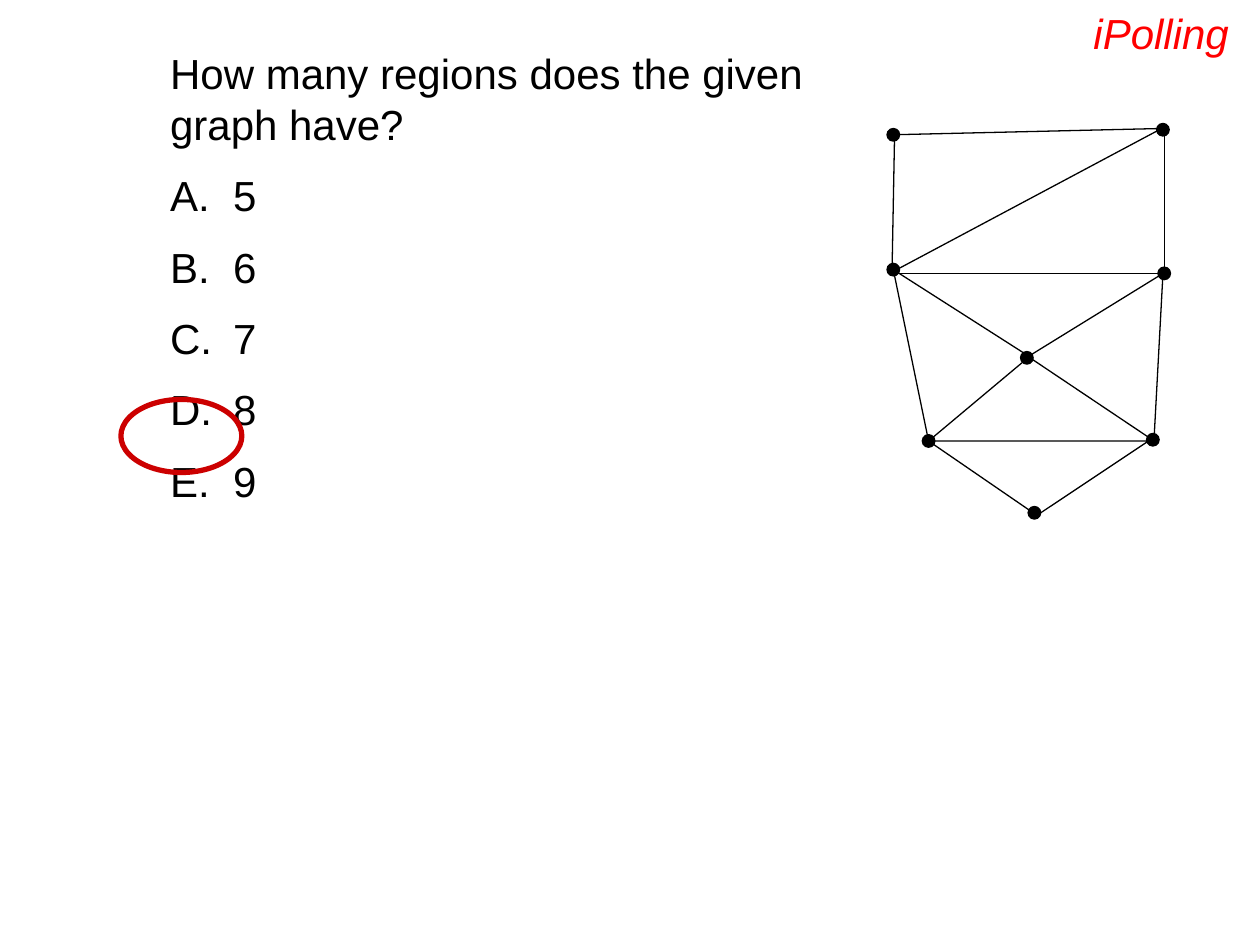
from lxml.etree import SubElement
from pptx import Presentation
from pptx.dml.color import RGBColor
from pptx.enum.shapes import MSO_CONNECTOR, MSO_SHAPE
from pptx.enum.text import MSO_ANCHOR, MSO_AUTO_SIZE
from pptx.oxml.ns import qn
from pptx.util import Pt

PX = 9144  # 100 px to the inch
THEME = {
    "font": "Arial",
    "size": Pt(24),
    "ink": RGBColor(0x00, 0x00, 0x00),
    "label": RGBColor(0xFF, 0x00, 0x00),
    "answer": RGBColor(0xCC, 0x00, 0x00),
    "thin": Pt(0.75),
    "thick": Pt(3),
}


def style_line(sp, color, width):
    sp.line.color.rgb = color
    sp.line.width = width


def style_font(p, color, italic=False):
    for r in p.runs:
        r.font.name = THEME["font"]
        r.font.size = THEME["size"]
        r.font.color.rgb = color
        r.font.italic = italic


prs = Presentation()
prs.slide_width, prs.slide_height = 1000 * PX, 750 * PX
s = prs.slides.add_slide(prs.slide_layouts[1])
title = s.shapes.title.element
title.getparent().remove(title)

# Question and lettered choices
body = s.placeholders[1]
body.left, body.top, body.width, body.height = [v * PX for v in (125, 33, 525, 394)]
tf = body.text_frame
tf.auto_size = MSO_AUTO_SIZE.NONE
tf.vertical_anchor = MSO_ANCHOR.TOP
lines = ["How many regions does the given graph have?", "5", "6", "7", "8", "9"]
tf.text = "\n".join(lines)
for i, p in enumerate(tf.paragraphs):
    p.space_before = Pt(12)
    style_font(p, THEME["ink"])
    pPr = p._p.get_or_add_pPr()
    indent = 50 * PX if i else 0
    pPr.set("marL", str(indent))
    pPr.set("indent", str(-indent))
    bullet = SubElement(pPr, qn("a:buAutoNum" if i else "a:buNone"))
    if i:
        bullet.set("type", "alphaUcPeriod")

# Straight edges of the graph
edges = [
    (708, 217, 925, 217),
    (710, 106, 708, 214),
    (924, 102, 924, 219),
]
for edge in edges:
    cxn = s.shapes.add_connector(MSO_CONNECTOR.STRAIGHT, *[v * PX for v in edge])
    style_line(cxn, THEME["ink"], THEME["thin"])
    SubElement(cxn._element.spPr, qn("a:effectLst"))

# Edge chains: upper (open) and lower (closed)
chains = [
    ([(708, 107), (922, 102), (708, 216)], False),
    ([(709, 214), (817, 283), (737, 350), (823, 409), (916, 347),
      (923, 217), (816, 283), (916, 350), (737, 350)], True),
]
for points, closed in chains:
    builder = s.shapes.build_freeform(*points[0], scale=PX)
    builder.add_line_segments(points[1:], close=closed)
    sp = builder.convert_to_shape()
    sp.shadow.inherit = False
    sp.fill.background()
    style_line(sp, THEME["ink"], THEME["thin"])

# Vertices
DOT = 10
dots = [(919, 212), (704, 209), (918, 98), (704, 102),
        (816, 402), (910, 344), (732, 345), (810, 279)]
for x, y in dots:
    sp = s.shapes.add_shape(MSO_SHAPE.OVAL, x * PX, y * PX, DOT * PX, DOT * PX)
    sp.shadow.inherit = False
    sp.fill.solid()
    sp.fill.fore_color.rgb = THEME["ink"]
    style_line(sp, THEME["ink"], THEME["thin"])

# Corner label
label = s.shapes.add_textbox(858 * PX, 1 * PX, 142 * PX, 51 * PX)
label.text_frame.word_wrap = True
label.text_frame.text = "iPolling"
style_font(label.text_frame.paragraphs[0], THEME["label"], italic=True)

# Ring around the answer
ring = s.shapes.add_shape(MSO_SHAPE.OVAL, 96 * PX, 317 * PX, 96 * PX, 58 * PX)
ring.shadow.inherit = False
ring.fill.background()
style_line(ring, THEME["answer"], THEME["thick"])

prs.save("out.pptx")
